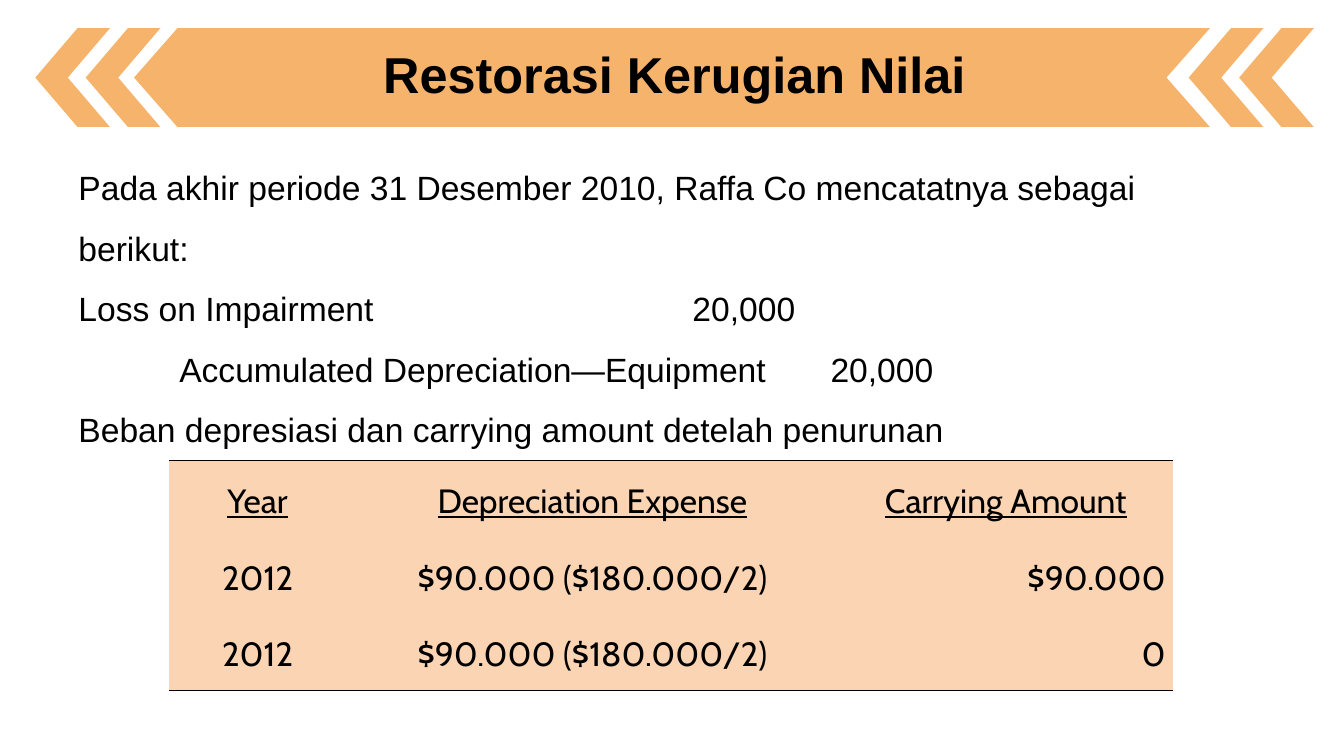
from lxml import etree
from pptx import Presentation
from pptx import util as u
from pptx.dml.color import RGBColor
from pptx.enum import shapes, text
from pptx.oxml.ns import qn

ORANGE, PEACH, BLACK = "F3932D", "FBD4B4", "000000"
LEFT, CENTER, RIGHT = text.PP_ALIGN.LEFT, text.PP_ALIGN.CENTER, text.PP_ALIGN.RIGHT

JOURNAL = [
    "Pada akhir periode 31 Desember 2010, Raffa Co mencatatnya sebagai berikut:",
    "Loss on Impairment\t20,000",
    "\tAccumulated Depreciation—Equipment\t20,000",
    "Beban depresiasi dan carrying amount detelah penurunan",
]
JOURNAL_TABS = {1: [6.09], 2: [1.0, 7.46]}
DEPRECIATION = [
    ["Year", "Depreciation Expense", "Carrying Amount"],
    ["2012", "$90.000 ($180.000/2)", "$90.000"],
    ["2012", "$90.000 ($180.000/2)", "0"],
]


def color(value):
    return RGBColor.from_string(value)


def write(paragraph, words, align=LEFT, spacing=1.5, **font):
    paragraph.alignment = align
    paragraph.line_spacing = spacing
    run = paragraph.add_run()
    run.text = words
    style = {"name": "Arial", "size": u.Pt(24), **font}
    for name, value in style.items():
        setattr(run.font, name, value)
    run.font.color.rgb = color(BLACK)


def paint_orange(shape):
    shape.shadow.inherit = False
    shape.fill.solid()
    shape.fill.fore_color.rgb = color(ORANGE)
    shape.line.fill.background()
    tint = shape.fill._xPr.find(qn("a:solidFill"))[0]
    etree.SubElement(tint, qn("a:alpha"), val="70000")


def add_textbox(slide, left, top, width, height, anchor):
    box = slide.shapes.add_textbox(*map(u.Inches, (left, top, width, height)))
    box.text_frame.word_wrap = True
    box.text_frame.vertical_anchor = anchor
    return box.text_frame


def add_banner(slide, left, top, width, height):
    # Chevrons pointing left, two at each end
    chevron_width, step, notch = 0.74, 0.5, 0.43
    last = left + width - chevron_width
    for x in (left, left + step, last - step, last):
        chevron = slide.shapes.add_shape(
            shapes.MSO_SHAPE.CHEVRON, *map(u.Inches, (x, top, chevron_width, height)))
        chevron.adjustments[0] = 0.565
        chevron.rotation = 180
        paint_orange(chevron)

    # Long bar with a point on the left and a notch on the right
    start, end = left + 0.98, left + width - 1.03
    middle, bottom = top + height / 2, top + height
    outline = [(start + notch, top), (end, top), (end - notch, middle),
               (end, bottom), (start + notch, bottom), (start, middle)]
    points = [(u.Inches(x), u.Inches(y)) for x, y in outline]
    builder = slide.shapes.build_freeform(*points[0], scale=1.0)
    builder.add_line_segments(points[1:], close=True)
    paint_orange(builder.convert_to_shape())

    # Title
    frame = add_textbox(slide, left, top + 0.09, width, 0.79, text.MSO_ANCHOR.MIDDLE)
    write(frame.paragraphs[0], "Restorasi Kerugian Nilai", CENTER, 0.9,
          size=u.Pt(36), bold=True)


def add_journal(slide, left, top, width, height):
    frame = add_textbox(slide, left, top, width, height, text.MSO_ANCHOR.TOP)
    for index, words in enumerate(JOURNAL):
        paragraph = frame.paragraphs[0] if index == 0 else frame.add_paragraph()
        write(paragraph, words)
        if index in JOURNAL_TABS:
            tabs = etree.SubElement(paragraph._p.get_or_add_pPr(), qn("a:tabLst"))
            for position in JOURNAL_TABS[index]:
                etree.SubElement(tabs, qn("a:tab"), pos=str(u.Inches(position)), algn="l")


def set_borders(cell, ruled):
    properties = cell._tc.get_or_add_tcPr()
    for index, side in enumerate(("lnL", "lnR", "lnT", "lnB")):
        line = etree.Element(qn(f"a:{side}"), w=str(u.Pt(1)))
        if side in ruled:
            fill = etree.SubElement(line, qn("a:solidFill"))
            etree.SubElement(fill, qn("a:srgbClr"), val=BLACK)
        else:
            etree.SubElement(line, qn("a:noFill"))
        properties.insert(index, line)


def add_depreciation_table(slide, left, top, widths, row_height):
    count = len(DEPRECIATION)
    table = slide.shapes.add_table(
        count, len(widths), *map(u.Inches, (left, top, sum(widths), count * row_height))).table
    table.first_row = table.horz_banding = False
    for column, width in zip(table.columns, widths):
        column.width = u.Inches(width)
    margins = {"margin_left": 0.07, "margin_right": 0.07, "margin_top": 0, "margin_bottom": 0}
    for r, values in enumerate(DEPRECIATION):
        table.rows[r].height = u.Inches(row_height)
        for c, value in enumerate(values):
            cell = table.cell(r, c)
            for name, inset in margins.items():
                setattr(cell, name, u.Inches(inset))
            cell.fill.solid()
            cell.fill.fore_color.rgb = color(PEACH)
            set_borders(cell, {0: ["lnT"], count - 1: ["lnB"]}.get(r, []))
            align = RIGHT if r > 0 and c == 2 else CENTER
            write(cell.text_frame.paragraphs[0], value, align, name="Cabin", underline=r == 0)


def main():
    presentation = Presentation()
    presentation.slide_width = u.Inches(13.33)
    presentation.slide_height = u.Inches(7.5)
    slide = presentation.slides.add_slide(presentation.slide_layouts[6])
    add_banner(slide, 0.35, 0.28, 12.68, 0.98)
    add_journal(slide, 0.68, 1.41, 11.76, 3.13)
    add_depreciation_table(slide, 1.68, 4.57, [1.75, 4.89, 3.31], 0.76)
    presentation.save("out.pptx")


if __name__ == "__main__":
    main()
